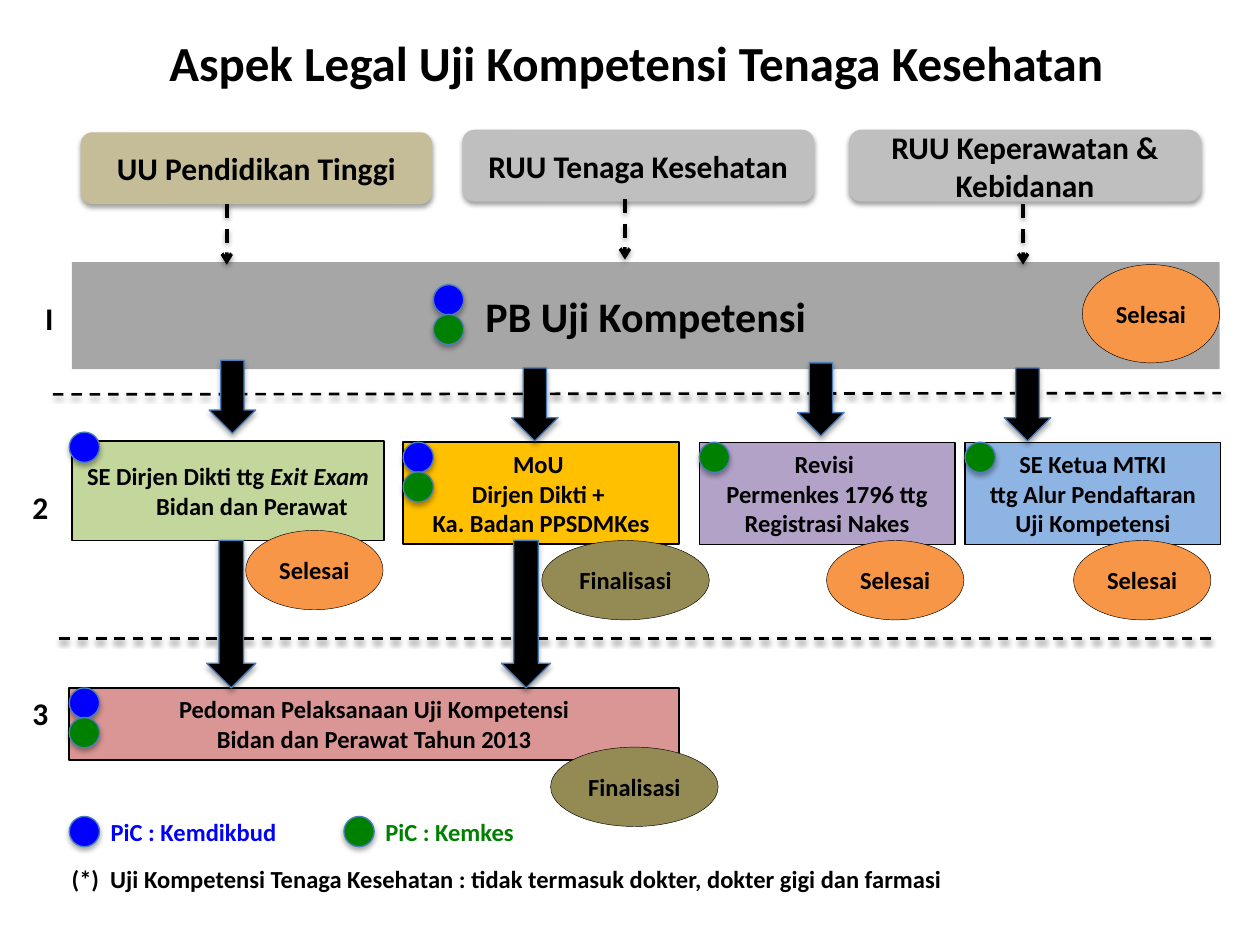
from dataclasses import dataclass

from lxml import etree
from pptx import Presentation
from pptx.dml.color import RGBColor
from pptx.enum.dml import MSO_LINE_DASH_STYLE as DASH
from pptx.enum.shapes import MSO_CONNECTOR, MSO_SHAPE as SHAPE
from pptx.enum.text import MSO_ANCHOR, PP_ALIGN as ALIGN
from pptx.oxml.ns import qn
from pptx.util import Inches, Pt


@dataclass(frozen=True)
class Theme:
    font: str = "Calibri"
    black: str = "000000"
    outline: str = "4B7EBC"
    blue: str = "0000FF"
    green: str = "008000"
    law: str = "C4BD97"
    bill: str = "BFBFBF"
    band: str = "A6A6A6"
    lime: str = "C3D69B"
    amber: str = "FFC000"
    purple: str = "B3A2C7"
    sky: str = "8EB4E3"
    rose: str = "D99694"
    done: str = "F79646"
    final: str = "948A54"
    title: int = 28
    heading: int = 24
    label: int = 18
    body: int = 14


T = Theme()
DOT = 0.24
DOT_STEP = 0.235
BADGES = {"Selesai": (1.09, T.done), "Finalisasi": (1.33, T.final)}


def rgb(color):
    return RGBColor.from_string(color)


def add_shadow(sp, alpha, distance):
    """Give the shape a soft shadow straight below it."""
    spPr = sp._element.spPr
    for old in spPr.findall(qn("a:effectLst")):
        spPr.remove(old)
    effects = etree.SubElement(spPr, qn("a:effectLst"))
    shadow = etree.SubElement(effects, qn("a:outerShdw"), blurRad=str(Pt(3.1)),
                              dist=str(Pt(distance)), dir="5400000", rotWithShape="0")
    color = etree.SubElement(shadow, qn("a:srgbClr"), val=T.black)
    etree.SubElement(color, qn("a:alpha"), val=str(alpha * 1000))


def write(sp, lines, size, color=T.black, align=ALIGN.CENTER, hanging=False):
    """Write one paragraph a line; a part between underscores is italic."""
    tf = sp.text_frame
    tf.word_wrap = True
    tf.vertical_anchor = MSO_ANCHOR.MIDDLE
    for i, line in enumerate(lines):
        p = tf.add_paragraph() if i else tf.paragraphs[0]
        p.alignment = align
        if hanging:
            p.space_before = Pt(size * 0.2)
            pPr = p._p.get_or_add_pPr()
            pPr.set("marL", str(Inches(0.38)))
            pPr.set("indent", str(Inches(-0.38)))
        for j, part in enumerate(line.split("_")):
            r = p.add_run()
            r.text = part
            r.font.name, r.font.size, r.font.bold = T.font, Pt(size), True
            r.font.italic = j % 2 == 1
            r.font.color.rgb = rgb(color)


def add_text(s, box, text, size, **style):
    write(s.shapes.add_textbox(*map(Inches, box)), [text], size, **style)


def add_box(s, kind, box, fill, line=None, width=0.75):
    sp = s.shapes.add_shape(kind, *map(Inches, box))
    sp.shadow.inherit = False
    sp.fill.solid()
    sp.fill.fore_color.rgb = rgb(fill)
    if line:
        sp.line.color.rgb = rgb(line)
        sp.line.width = Pt(width)
    else:
        sp.line.fill.background()
    return sp


def add_dashed(s, start, end, width=1.5, arrow=False):
    cn = s.shapes.add_connector(MSO_CONNECTOR.STRAIGHT, *map(Inches, start + end))
    cn.line.color.rgb = rgb(T.black)
    cn.line.width = Pt(width)
    cn.line.dash_style = DASH.DASH
    if arrow:
        etree.SubElement(cn.line._get_or_add_ln(), qn("a:tailEnd"), type="arrow")
    add_shadow(cn, 38, 1.6)


def add_dots(s, left, top, colors):
    """Stack one dot for each ministry in charge."""
    for i, color in enumerate(colors):
        box = left, top + i * DOT_STEP, DOT, DOT
        add_shadow(add_box(s, SHAPE.OVAL, box, color, T.outline), 35, 1.8)


def add_block_arrow(s, left, top, width=0.37, height=0.58):
    box = left, top, width, height
    add_shadow(add_box(s, SHAPE.DOWN_ARROW, box, T.black, T.outline), 35, 1.8)


def add_badge(s, left, top, status, height=0.63):
    width, fill = BADGES[status]
    sp = add_box(s, SHAPE.OVAL, (left, top, width, height), fill, T.black, 0.25)
    write(sp, [status], T.body)


def add_law(s, box, text, fill, arrow_x, arrow_dy):
    """A law with the dashed arrow that leads down to the regulation."""
    left, top, width, height = box
    sp = add_box(s, SHAPE.ROUNDED_RECTANGLE, box, fill)
    add_shadow(sp, 38, 1.6)
    write(sp, [text], T.label)
    x, y = left + arrow_x, top + arrow_dy
    add_dashed(s, (x, y), (x, y + 0.48), width=2, arrow=True)


def add_regulation(s, box):
    left, top, width, height = box
    sp = add_box(s, SHAPE.RECTANGLE, box, T.band)
    write(sp, ["PB Uji Kompetensi"], T.heading, hanging=True)
    add_dots(s, left + 2.87, top + 0.18, [T.blue, T.green])
    add_badge(s, left + width - 1.09, top + 0.02, "Selesai", 0.78)


def add_document(s, box, lines, fill, dots, border=0.75, dot_dy=0, hanging=False):
    left, top, width, height = box
    sp = add_box(s, SHAPE.RECTANGLE, box, fill, T.black, border)
    write(sp, lines, T.body, hanging=hanging)
    add_dots(s, left, top + dot_dy, dots)


def add_legend(s, left, top):
    entries = [("PiC : Kemdikbud", T.blue), ("PiC : Kemkes", T.green)]
    for i, (text, color) in enumerate(entries):
        x = left + i * 2.18
        add_dots(s, x, top + 0.05, [color])
        add_text(s, (x + 0.23, top, 2.2, 0.34), text, T.body,
                 color=color, align=ALIGN.LEFT)


def main():
    prs = Presentation()
    prs.slide_width, prs.slide_height = Inches(10), Inches(7.5)
    s = prs.slides.add_slide(prs.slide_layouts[6])
    both = [T.blue, T.green]

    add_text(s, (0.05, 0.1, 10, 0.78),
             "Aspek Legal Uji Kompetensi Tenaga Kesehatan", T.title)
    add_regulation(s, (0.57, 2.08, 9.11, 0.85))
    add_law(s, (0.64, 1.05, 2.79, 0.57), "UU Pendidikan Tinggi", T.law, 1.16, 0.57)
    add_law(s, (3.67, 1.03, 2.79, 0.57), "RUU Tenaga Kesehatan", T.bill, 1.29, 0.55)
    add_law(s, (6.74, 1.03, 2.79, 0.57), "RUU Keperawatan & Kebidanan", T.bill, 1.38, 0.59)

    add_dashed(s, (0.42, 3.13), (9.69, 3.12))
    add_dashed(s, (0.47, 5.07), (9.61, 5.07))
    for text, left, top in [("I", 0.26, 2.32), ("2", 0.16, 3.82), ("3", 0.16, 5.46)]:
        add_text(s, (left, top, 0.77, 0.4), text, T.label, align=ALIGN.LEFT)

    add_document(s, (0.57, 3.5, 2.48, 0.79),
                 ["SE Dirjen Dikti ttg _Exit Exam _Bidan dan Perawat"],
                 T.lime, [], border=1, hanging=True)
    add_dots(s, 0.55, 3.43, [T.blue])
    add_document(s, (3.2, 3.51, 2.19, 0.81),
                 ["MoU ", "Dirjen Dikti + ", "Ka. Badan PPSDMKes"],
                 T.amber, both, border=1)
    add_document(s, (5.55, 3.51, 2.03, 0.81),
                 ["Revisi ", "Permenkes 1796 ttg Registrasi Nakes"],
                 T.purple, [T.green])
    add_document(s, (7.66, 3.51, 2.03, 0.81),
                 ["SE Ketua MTKI", "ttg Alur Pendaftaran Uji Kompetensi"],
                 T.sky, [T.green])
    add_document(s, (0.55, 5.46, 4.84, 0.57),
                 ["Pedoman Pelaksanaan Uji Kompetensi", "Bidan dan Perawat Tahun 2013"],
                 T.rose, both, border=1)

    for left, top in [(1.66, 2.86), (4.06, 2.92), (6.33, 2.88), (7.97, 2.92)]:
        add_block_arrow(s, left, top)
    for left in (1.64, 3.98):
        add_block_arrow(s, left, 4.29, 0.39, 1.17)
    for left, top, status in [(1.95, 4.21, "Selesai"), (4.3, 4.29, "Finalisasi"),
                              (6.56, 4.29, "Selesai"), (8.52, 4.29, "Selesai"),
                              (4.37, 5.93, "Finalisasi")]:
        add_badge(s, left, top, status)

    add_legend(s, 0.55, 6.43)
    add_text(s, (0.47, 6.8, 9.29, 0.34),
             "(*)  Uji Kompetensi Tenaga Kesehatan : tidak termasuk dokter, "
             "dokter gigi dan farmasi", T.body, align=ALIGN.LEFT)
    prs.save("out.pptx")


if __name__ == "__main__":
    main()
